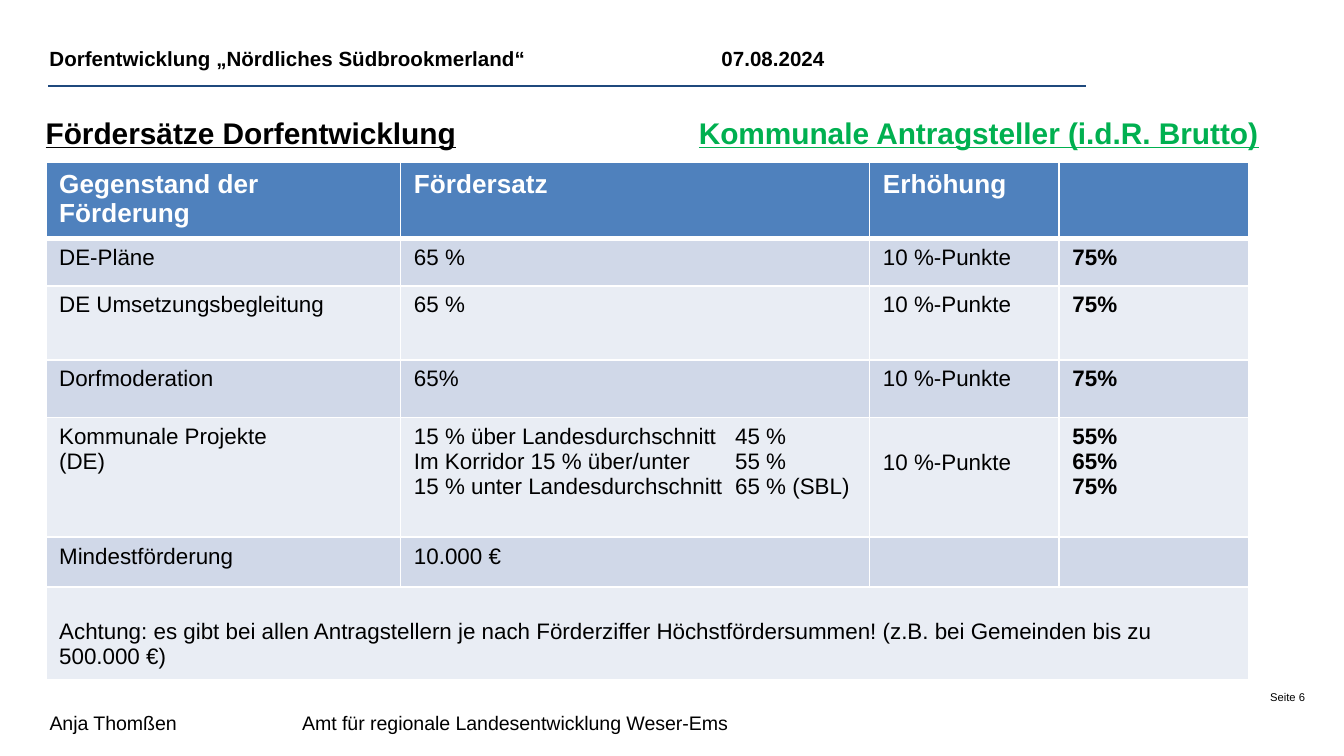
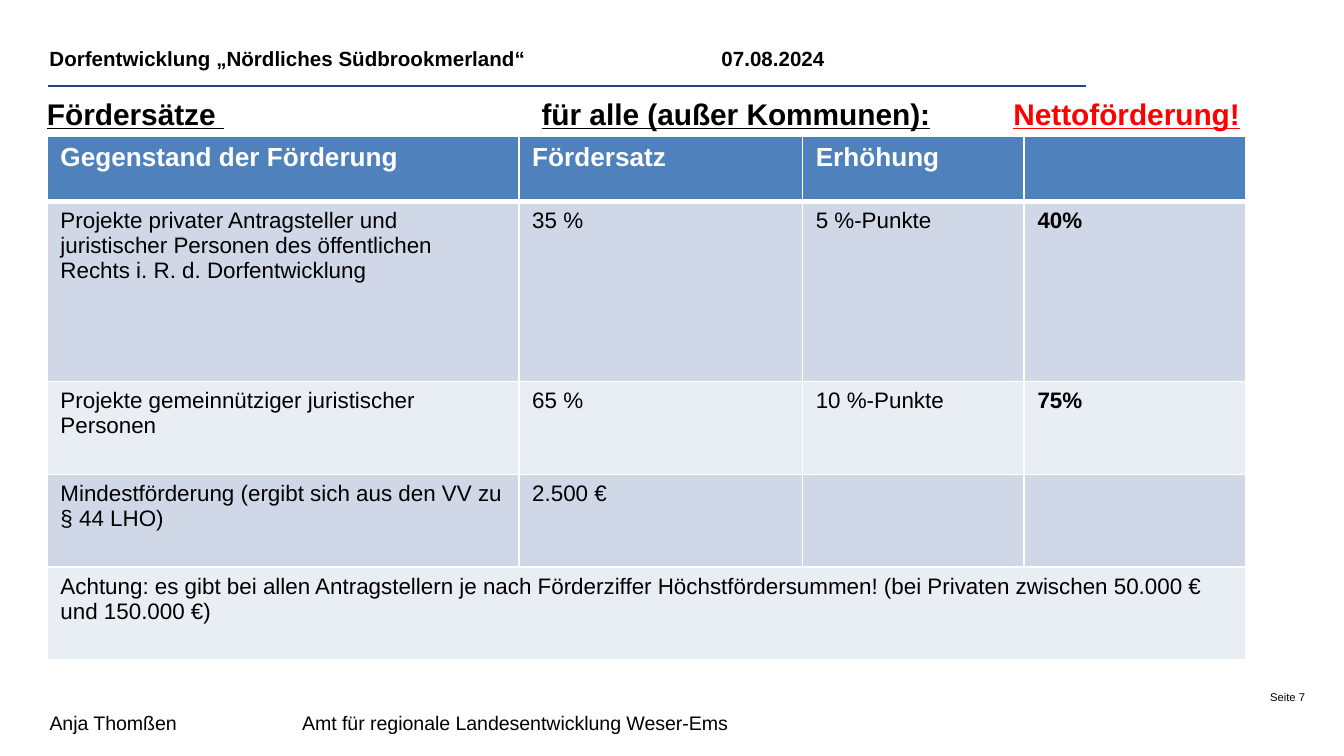
from dataclasses import dataclass

from lxml.etree import SubElement
from pptx import Presentation
from pptx.dml.color import RGBColor
from pptx.enum.shapes import MSO_CONNECTOR
from pptx.enum.text import MSO_AUTO_SIZE, PP_ALIGN
from pptx.oxml import parse_xml
from pptx.oxml.ns import nsdecls, qn
from pptx.util import Inches, Pt


@dataclass(frozen=True)
class Theme:
    """Colours, font and type sizes shared by the slides."""

    font: str = "Arial"
    black: str = "000000"
    white: str = "FFFFFF"
    rule: str = "1F497D"
    green: str = "00B050"
    red: str = "FF0000"
    head: str = "4F81BD"
    bands: tuple = ("D0D8E8", "E9EDF4")
    title: float = 16
    column: float = 14
    body: float = 12
    header: float = 11
    footer: float = 10.5
    page: float = 6


T = Theme()
LINE_DROP = 0.19


def write(tf, paras, size=T.body, color=T.black, bold=False, underline=False,
          align=None, tabs=()):
    """Fill a text frame; a paragraph is a string or a list of (text, colour) runs."""
    for i, runs in enumerate(paras):
        p = tf.paragraphs[0] if i == 0 else tf.add_paragraph()
        if tabs:
            tab_list = SubElement(p._p.get_or_add_pPr(), qn("a:tabLst"))
            for pos in tabs:
                SubElement(tab_list, qn("a:tab"), pos=str(Inches(pos)), algn="l")
        if align is not None:
            p.alignment = align
        for text, run_color in [(runs, color)] if isinstance(runs, str) else runs:
            r = p.add_run()
            r.text = text
            r.font.name, r.font.size, r.font.bold = T.font, Pt(size), bold
            r.font.underline = underline
            r.font.color.rgb = RGBColor.from_string(run_color)


def add_text(s, box, paras, inset=True, grow=True, **fmt):
    """Add a wrapping text box."""
    tf = s.shapes.add_textbox(*map(Inches, box)).text_frame
    tf.word_wrap = True
    tf.auto_size = MSO_AUTO_SIZE.SHAPE_TO_FIT_TEXT if grow else MSO_AUTO_SIZE.NONE
    if not inset:
        tf.margin_left = tf.margin_right = tf.margin_top = tf.margin_bottom = 0
    write(tf, paras, **fmt)


def add_line(s, x1, x2, y, color, width):
    """Draw a horizontal line."""
    ln = s.shapes.add_connector(MSO_CONNECTOR.STRAIGHT, *map(Inches, (x1, y, x2, y)))
    ln.line.color.rgb = RGBColor.from_string(color)
    ln.line.width = Pt(width)
    SubElement(ln._element.spPr, qn("a:effectLst"))


def add_frame(s, page):
    """Add the header, its rule and the footer."""
    add_line(s, 0.36, 8.08, 0.64, T.rule, 0.75)
    for x, w, text in ((0.27, 2.21, "Anja Thomßen"),
                       (2.15, 4, "Amt für regionale Landesentwicklung Weser-Ems")):
        add_text(s, (x, 5.24, w, 0.29), [text], size=T.footer)
    add_text(s, (8.78, 5.14, 0.93, 0.1), [f"Seite {page}"], inset=False,
             size=T.page, align=PP_ALIGN.RIGHT)
    add_text(s, (0.27, 0.29, 6.36, 0.29),
             ["Dorfentwicklung „Nördliches Südbrookmerland“\t07.08.2024"],
             size=T.header, bold=True, tabs=[5])


def add_title(s, box, runs, tabs):
    """Add the underlined title, spread by tab stops."""
    add_text(s, box, [runs], inset=False, grow=False, size=T.title,
             bold=True, underline=True, tabs=tabs)


def style_cell(cell, fill, top, bottom):
    """Set the fill and the white borders of a cell."""
    cell.fill.solid()
    cell.fill.fore_color.rgb = RGBColor.from_string(fill)
    tc_pr = cell._tc.get_or_add_tcPr()
    for i, (side, width) in enumerate((("L", 1), ("R", 1), ("T", top), ("B", bottom))):
        tc_pr.insert(i, parse_xml(
            f'<a:ln{side} {nsdecls("a")} w="{Pt(width)}"><a:solidFill>'
            f'<a:srgbClr val="{T.white}"/></a:solidFill></a:ln{side}>'))


def add_rates(s, box, cols, heights, rows, note, dropped=()):
    """Add the table of rates, closed by a note across all columns."""
    rows = [("Gegenstand der Förderung", "Fördersatz", "Erhöhung", ""),
            *rows, (note, "", "", "")]
    table = s.shapes.add_table(len(rows), len(cols), *map(Inches, box)).table
    table.horz_banding = False
    for col, width in zip(table.columns, cols):
        col.width = Inches(width)
    for i, (row, height) in enumerate(zip(rows, heights)):
        table.rows[i].height = Inches(height)
        for j, text in enumerate(row):
            cell = table.cell(i, j)
            style_cell(cell, T.bands[(i - 1) % 2] if i else T.head,
                       3 if i == 1 else 1, 1 if i else 3)
            if (i, j) in dropped:
                cell.margin_top = Inches(0.05 + LINE_DROP)
            if not text:
                end = cell.text_frame.paragraphs[0]._p.get_or_add_endParaRPr()
                end.set("sz", str(T.body * 100))
                continue
            write(cell.text_frame, text.split("\n"), size=T.body if i else T.column,
                  color=T.black if i else T.white, bold=i == 0 or j == 3,
                  tabs=[2.39] if "\t" in text else ())
    last = len(rows) - 1
    table.cell(last, 0).merge(table.cell(last, len(cols) - 1))


def municipal_slide(s):
    """Build the slide with the rates for municipal applicants."""
    add_frame(s, 6)
    add_title(s, (0.34, 0.85, 9.3, 3.76),
              [("Fördersätze Dorfentwicklung", T.black), ("\t", T.black),
               ("Kommunale Antragsteller (i.d.R. Brutto)", T.green)],
              tabs=[4.86])
    add_rates(
        s, (0.34, 1.21, 8.95, 3.85), (2.64, 3.49, 1.41, 1.41),
        (0.49, 0.35, 0.55, 0.43, 0.89, 0.37, 0.37),
        [("DE-Pläne", "65 %", "10 %-Punkte", "75%"),
         ("DE Umsetzungsbegleitung", "65 %", "10 %-Punkte", "75%"),
         ("Dorfmoderation", "65%", "10 %-Punkte", "75%"),
         ("Kommunale Projekte\n(DE)",
          "15 % über Landesdurchschnitt\t45 %\n"
          "Im Korridor 15 % über/unter\t55 %\n"
          "15 % unter Landesdurchschnitt\t65 % (SBL)",
          "10 %-Punkte", "55%\n65%\n75%"),
         ("Mindestförderung", "10.000 €", "", "")],
        "Achtung: es gibt bei allen Antragstellern je nach Förderziffer "
        "Höchstfördersummen! (z.B. bei Gemeinden bis zu 500.000 €)",
        dropped=((4, 2), (6, 0)))


def private_slide(s):
    """Build the slide with the rates for all other applicants."""
    add_frame(s, 7)
    add_title(s, (0.35, 0.71, 9.14, 3.76),
              [("Fördersätze ", T.black), ("\t", T.black),
               ("für alle (außer Kommunen):", T.black), ("\t", T.black),
               ("Nettoförderung!", T.red)],
              tabs=[3.68, 7.19])
    add_rates(
        s, (0.35, 1.01, 8.91, 3.91), (3.51, 2.11, 1.65, 1.65),
        (0.49, 1.34, 0.69, 0.69, 0.69),
        [("Projekte privater Antragsteller und juristischer Personen des "
          "öffentlichen Rechts i. R. d. Dorfentwicklung",
          "35 %", "5 %-Punkte", "40%"),
         ("Projekte gemeinnütziger juristischer Personen",
          "65 %", "10 %-Punkte", "75%"),
         ("Mindestförderung (ergibt sich aus den VV zu § 44 LHO)",
          "2.500 €", "", "")],
        "Achtung: es gibt bei allen Antragstellern je nach Förderziffer "
        "Höchstfördersummen! (bei Privaten zwischen 50.000 € und 150.000 €)")


def main():
    """Build and save the presentation."""
    prs = Presentation()
    prs.slide_width, prs.slide_height = Inches(10), Inches(10 * 9 / 16)
    for build in (municipal_slide, private_slide):
        build(prs.slides.add_slide(prs.slide_layouts[6]))
    prs.save("out.pptx")


if __name__ == "__main__":
    main()
